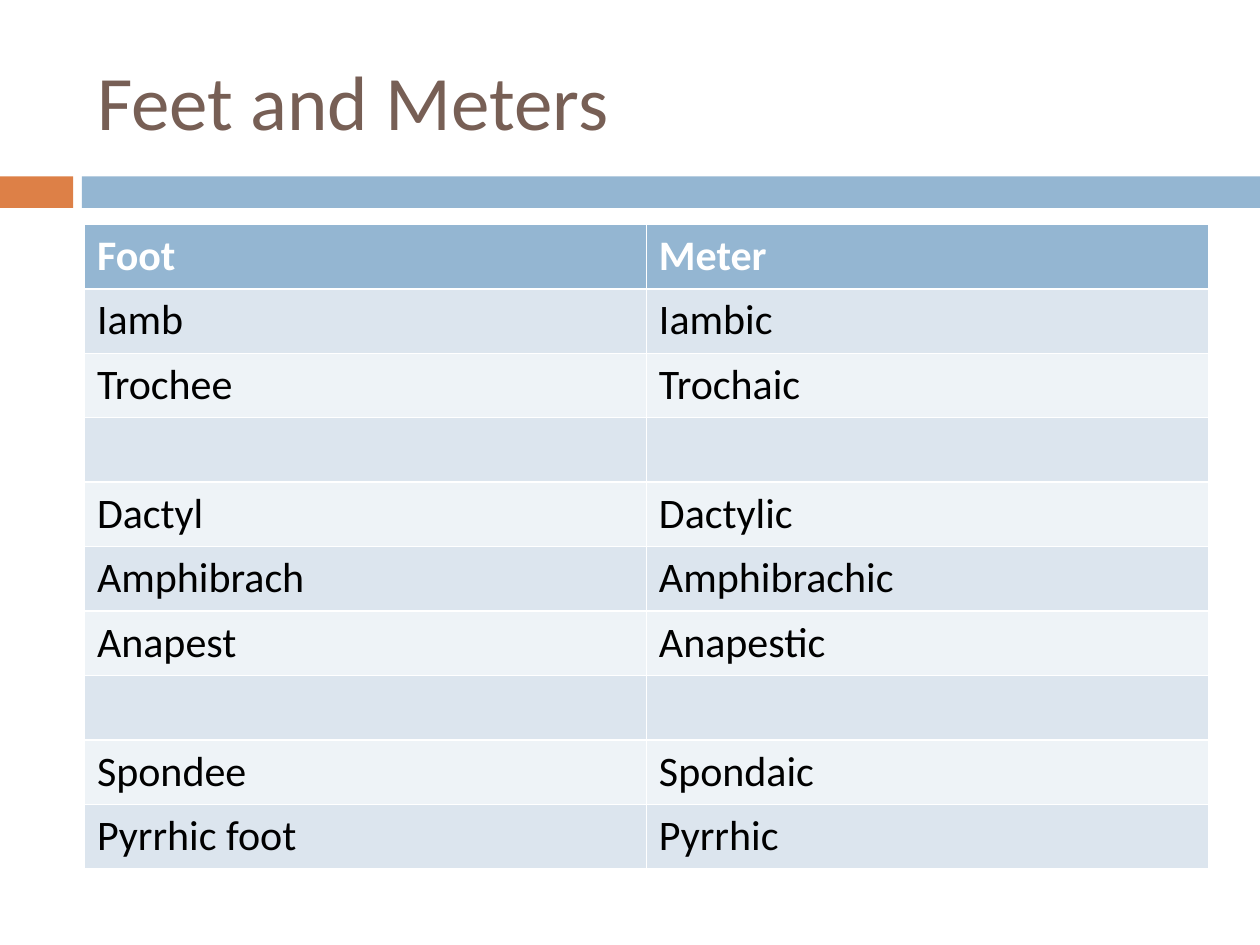
from pptx import Presentation
from pptx.dml.color import RGBColor
from pptx.enum.shapes import MSO_SHAPE
from pptx.enum.text import MSO_ANCHOR, PP_ALIGN
from pptx.util import Inches, Pt

COLORS = {
    "title": "775F55",
    "accent": "DD8047",
    "header": "94B6D2",
    "odd_row": "DCE5EE",
    "even_row": "EEF3F7",
    "header_text": "FFFFFF",
    "body_text": "000000",
}
FONT = "Calibri"
LEFT, WIDTH = 0.67, 8.92
ROW_HEIGHT = 0.512
FEET_AND_METERS = [
    ("Foot", "Meter"),
    ("Iamb", "Iambic"),
    ("Trochee", "Trochaic"),
    ("", ""),
    ("Dactyl", "Dactylic"),
    ("Amphibrach", "Amphibrachic"),
    ("Anapest", "Anapestic"),
    ("", ""),
    ("Spondee", "Spondaic"),
    ("Pyrrhic foot", "Pyrrhic"),
]


def color(name):
    return RGBColor.from_string(COLORS[name])


def style_text(paragraph, size, color_name, bold=False):
    paragraph.font.name = FONT
    paragraph.font.size = Pt(size)
    paragraph.font.bold = bold
    paragraph.font.color.rgb = color(color_name)


def add_band(slide, left, width, color_name):
    band = slide.shapes.add_shape(
        MSO_SHAPE.RECTANGLE, Inches(left), Inches(1.4), Inches(width), Inches(0.25)
    )
    band.shadow.inherit = False
    band.fill.solid()
    band.fill.fore_color.rgb = color(color_name)
    band.line.fill.background()


def set_title(slide, text):
    title = slide.shapes.title
    title.left, title.top = Inches(LEFT), Inches(0.25)
    title.width, title.height = Inches(WIDTH), Inches(1.08)
    title.text_frame.text = text
    title.text_frame.vertical_anchor = MSO_ANCHOR.MIDDLE
    heading = title.text_frame.paragraphs[0]
    heading.alignment = PP_ALIGN.LEFT
    style_text(heading, 44, "title")


def fill_cell(cell, text, fill_name, is_header):
    cell.fill.solid()
    cell.fill.fore_color.rgb = color(fill_name)
    cell.text = text
    text_color = "header_text" if is_header else "body_text"
    style_text(cell.text_frame.paragraphs[0], 24, text_color, is_header)


def add_meter_table(slide, rows):
    table = slide.shapes.add_table(
        len(rows), len(rows[0]), Inches(LEFT), Inches(1.78),
        Inches(WIDTH), Inches(ROW_HEIGHT * len(rows)),
    ).table
    for row_index, row in enumerate(rows):
        is_header = row_index == 0
        band_name = "odd_row" if row_index % 2 else "even_row"
        fill_name = "header" if is_header else band_name
        for column_index, text in enumerate(row):
            fill_cell(table.cell(row_index, column_index), text, fill_name, is_header)


def main():
    presentation = Presentation()
    presentation.slide_width = Inches(10)
    presentation.slide_height = Inches(7.5)
    slide = presentation.slides.add_slide(presentation.slide_layouts[5])
    add_band(slide, 0, 0.58, "accent")
    add_band(slide, 0.65, 9.35, "header")
    set_title(slide, "Feet and Meters")
    add_meter_table(slide, FEET_AND_METERS)
    presentation.save("out.pptx")


if __name__ == "__main__":
    main()
